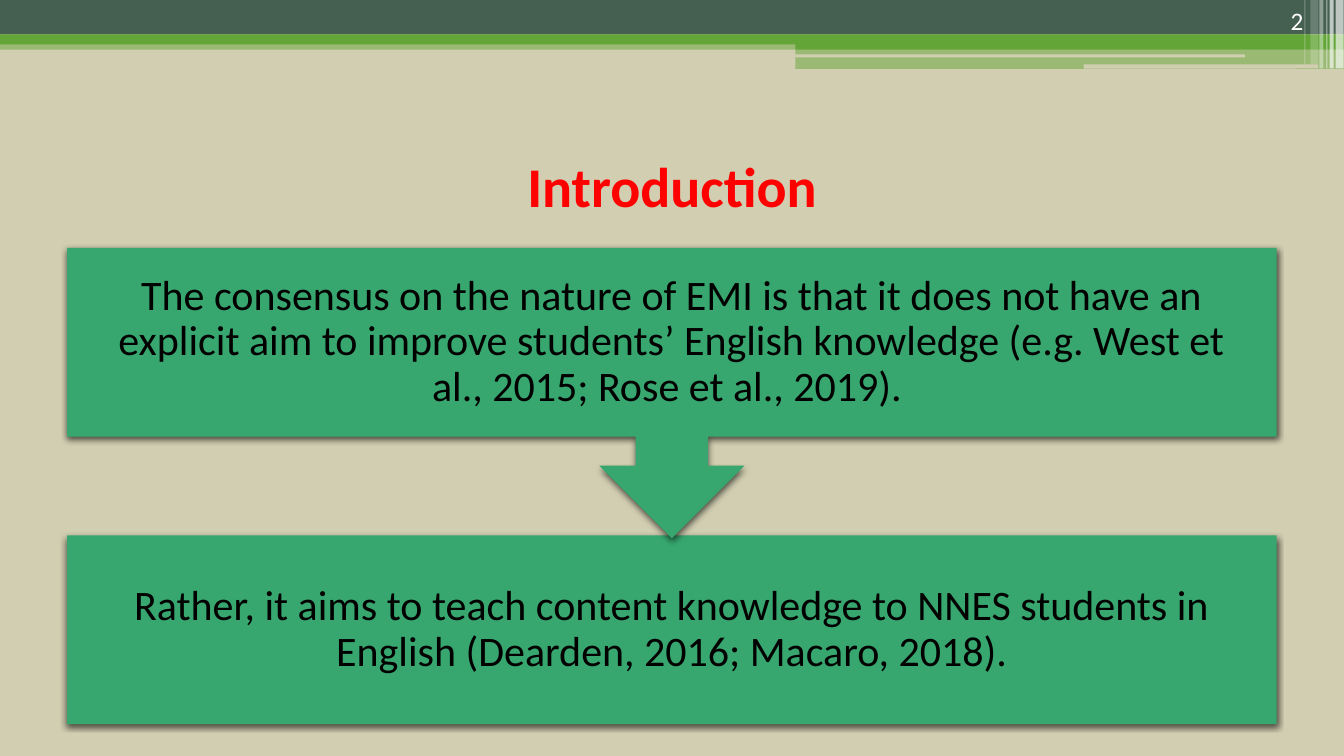
"""Build the Introduction slide on a grid of 160 columns by 90 rows."""
import dataclasses

import lxml.etree
import pptx
import pptx.dml.color
import pptx.enum.shapes
import pptx.enum.text
import pptx.oxml.ns
import pptx.util

RGB = pptx.dml.color.RGBColor
SHAPE = pptx.enum.shapes.MSO_SHAPE
ALIGN = pptx.enum.text.PP_ALIGN
ANCHOR = pptx.enum.text.MSO_ANCHOR

SAND = RGB(0xD2, 0xCE, 0xB1)
SLATE = RGB(0x45, 0x5F, 0x51)
GREEN = RGB(0x63, 0xA5, 0x37)
JADE = RGB(0x37, 0xA7, 0x6F)
RED = RGB(0xFF, 0x00, 0x00)
WHITE = RGB(0xFF, 0xFF, 0xFF)
BLACK = RGB(0x00, 0x00, 0x00)

FONT = "Calibri"
COLS, ROWS = 160, 90
CELL = pptx.util.Inches(7.5) / ROWS
MARGIN, CONTENT = 8, 144


@dataclasses.dataclass(frozen=True)
class Bar:
    """A decorative bar, measured in grid cells, with opacity in percent."""
    col: float
    row: float
    cols: float
    rows: float
    color: RGB
    opacity: int = 100
    kind: SHAPE = SHAPE.RECTANGLE


@dataclasses.dataclass(frozen=True)
class Step:
    """A statement in the flow, measured in grid rows."""
    kind: SHAPE
    row: float
    rows: float
    text: str


BARS = [
    Bar(0, 4.8, COLS, 1.1, GREEN, 50),
    Bar(0, 0, COLS, 4.1, SLATE),
    Bar(0, 4.1, COLS, 1.2, GREEN),
    Bar(94.68, 4.68, 65.32, 1.2, GREEN),
    Bar(94.68, 5.8, 65.32, 2.4, GREEN, 50),
    Bar(94.56, 6.48, 53.64, 0.36, SAND, kind=SHAPE.ROUNDED_RECTANGLE),
    Bar(129, 7.68, 27.96, 0.48, SAND, kind=SHAPE.ROUNDED_RECTANGLE),
    Bar(159, 0, 0.96, 8.16, WHITE, 65),
    Bar(158.28, 0, 0.48, 8.16, WHITE, 65),
    Bar(157.92, 0, 0.12, 8.16, WHITE, 60),
    Bar(157.08, 0, 0.48, 8.16, WHITE, 40),
    Bar(156, 0, 0.96, 7.68, WHITE, 20),
    Bar(155.28, 0, 0.12, 7.68, WHITE, 30),
]

STEPS = [
    Step(SHAPE.RECTANGLE, 63.75, 22.45,
         "Rather, it aims to teach content knowledge to NNES students in "
         "English (Dearden, 2016; Macaro, 2018)."),
    Step(SHAPE.DOWN_ARROW_CALLOUT, 29.52, 34.56,
         "The consensus on the nature of EMI is that it does not have an "
         "explicit aim to improve students’ English knowledge (e.g. West et "
         "al., 2015; Rose et al., 2019). "),
]


def cells(*counts: float) -> list[int]:
    """Convert grid counts to lengths."""
    return [round(count * CELL) for count in counts]


def add_filled(s, kind: SHAPE, box: list[int], color: RGB):
    """Add a flat shape with a solid fill and no line."""
    sp = s.shapes.add_shape(kind, *box)
    sp.shadow.inherit = False
    sp.fill.solid()
    sp.fill.fore_color.rgb = color
    sp.line.fill.background()
    return sp


def add_child(parent, tag: str, **attrs: str):
    """Append a drawing element to its parent."""
    return lxml.etree.SubElement(parent, pptx.oxml.ns.qn(tag), attrs)


def write(tf, text: str, size: int, color: RGB, align: ALIGN, anchor: ANCHOR,
          bold: bool = False):
    """Write one run into a frame and return its paragraph."""
    tf.word_wrap = True
    tf.vertical_anchor = anchor
    p = tf.paragraphs[0]
    p.alignment = align
    r = p.add_run()
    r.text = text
    r.font.name = FONT
    r.font.size = pptx.util.Pt(size)
    r.font.bold = bold
    r.font.color.rgb = color
    return p


def draw_bar(s, bar: Bar) -> None:
    """Draw a decorative bar with its opacity."""
    sp = add_filled(s, bar.kind, cells(bar.col, bar.row, bar.cols, bar.rows), bar.color)
    if bar.opacity < 100:
        color = sp._element.spPr.find(".//" + pptx.oxml.ns.qn("a:srgbClr"))
        add_child(color, "a:alpha", val=str(bar.opacity * 1000))


def draw_step(s, step: Step) -> None:
    """Draw a statement box with a soft shadow."""
    sp = add_filled(s, step.kind, cells(MARGIN, step.row, CONTENT, step.rows), JADE)
    effects = sp._element.spPr.find(pptx.oxml.ns.qn("a:effectLst"))
    shadow = add_child(effects, "a:outerShdw", blurRad=str(pptx.util.Pt(4.5)),
                       dist=str(pptx.util.Pt(1.5)), dir="5400000", rotWithShape="0")
    add_child(add_child(shadow, "a:srgbClr", val=str(BLACK)), "a:alpha", val="63000")
    tf = sp.text_frame
    inset = pptx.util.Inches(0.23)
    tf.margin_left = tf.margin_right = tf.margin_top = tf.margin_bottom = inset
    p = write(tf, step.text, 30, BLACK, ALIGN.CENTER, ANCHOR.MIDDLE)
    p.line_spacing = 0.9


def main() -> None:
    """Build and save the slide."""
    prs = pptx.Presentation()
    prs.slide_width, prs.slide_height = cells(COLS, ROWS)
    s = prs.slides.add_slide(prs.slide_layouts[5])
    s.background.fill.solid()
    s.background.fill.fore_color.rgb = SAND
    for bar in BARS:
        draw_bar(s, bar)

    title = s.shapes.title
    title.left, title.top, title.width, title.height = cells(MARGIN, 15, CONTENT, 14)
    write(title.text_frame, "Introduction", 40, RED, ALIGN.CENTER, ANCHOR.MIDDLE, True)

    number = s.shapes.add_textbox(*cells(143, 0, 13.36, 4.8))
    p = write(number.text_frame, "2", 18, WHITE, ALIGN.RIGHT, ANCHOR.BOTTOM)
    p.space_after = pptx.util.Pt(6)

    for step in STEPS:
        draw_step(s, step)
    prs.save("out.pptx")


if __name__ == "__main__":
    main()
